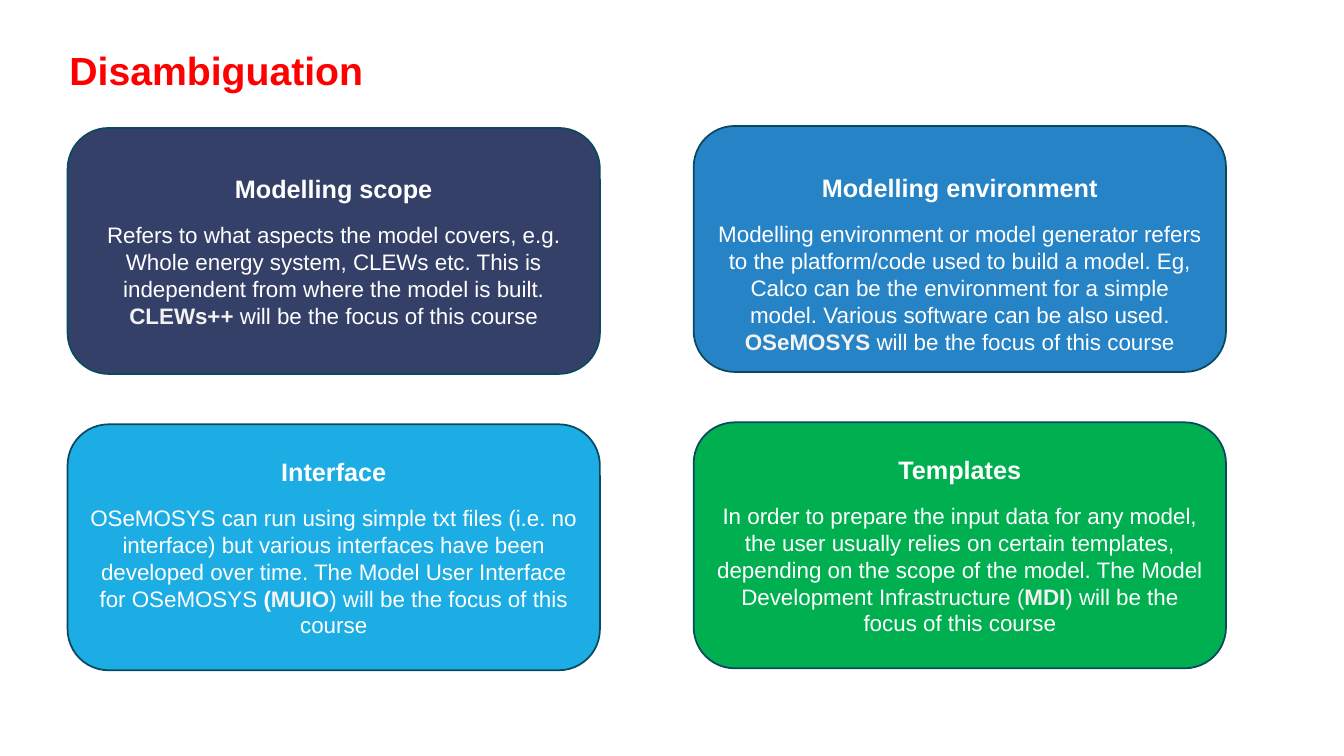
from typing import NamedTuple

from pptx import Presentation
from pptx.dml.color import RGBColor
from pptx.enum.shapes import MSO_SHAPE
from pptx.enum.text import MSO_ANCHOR, PP_ALIGN
from pptx.util import Emu, Pt

ROUNDED = MSO_SHAPE.ROUNDED_RECTANGLE
MIDDLE, BOTTOM = MSO_ANCHOR.MIDDLE, MSO_ANCHOR.BOTTOM
CENTER = PP_ALIGN.CENTER

PX = 9144
FONT = "Arial"
COLORS = {
    "title": "FF0000",
    "text": "FFFFFF",
    "accent": "F2F2F2",
    "outline": "0B4960",
    "navy": "344068",
    "blue": "2683C6",
    "sky": "1CADE4",
    "green": "00B050",
}

CARD_LEFT, CARD_TOP = 67, 127
CARD_W, CARD_H = 528, 244
COL_STEP, ROW_STEP = 621, 294
RIGHT_COL_RISE = 2


class Run(NamedTuple):
    text: str
    bold: bool = False
    color: str = "text"


class Card(NamedTuple):
    heading: str
    fill: str
    body: list[Run]
    top_inset: int = 5


CARDS = [
    Card("Modelling scope", "navy", [
        Run("Refers to what aspects the model covers, e.g. Whole energy system, "
            "CLEWs etc. This is independent from where the model is built. "),
        Run("CLEWs++ ", True, "accent"),
        Run("will be the focus of this course"),
    ]),
    Card("Modelling environment", "blue", [
        Run("Modelling environment or model generator refers to the platform/code "
            "used to build a model. Eg, Calco can be the environment for a simple "
            "model. Various software can be also used"),
        Run(". ", False, "accent"),
        Run("OSeMOSYS ", True, "accent"),
        Run("will be the focus of this course"),
    ], top_inset=34),
    Card("Interface", "sky", [
        Run("OSeMOSYS can run using simple txt files (i.e. no interface) but "
            "various interfaces have been developed over time. The Model User "
            "Interface for OSeMOSYS"),
        Run(" (", True),
        Run("MUIO", True, "accent"),
        Run(") will be the focus of this course"),
    ]),
    Card("Templates", "green", [
        Run("In order to prepare the input data for any model, the user usually "
            "relies on certain templates, depending on the scope of the model. "
            "The Model Development Infrastructure "),
        Run("(", False, "accent"),
        Run("MDI", True, "accent"),
        Run(") ", False, "accent"),
        Run("will be the focus of this course"),
    ]),
]


def px(n: int) -> Emu:
    return Emu(n * PX)


def rgb(name: str) -> RGBColor:
    return RGBColor.from_string(COLORS[name])


def add_runs(p, runs: list[Run], size: int) -> None:
    for run in runs:
        r = p.add_run()
        r.text = run.text
        r.font.name = FONT
        r.font.size = Pt(size)
        r.font.bold = run.bold
        r.font.color.rgb = rgb(run.color)


def set_frame(tf, anchor: MSO_ANCHOR, top_inset: int = 5) -> None:
    tf.word_wrap = True
    tf.vertical_anchor = anchor
    tf.margin_left = tf.margin_right = px(10)
    tf.margin_top, tf.margin_bottom = px(top_inset), px(5)


def add_title(s, text: str) -> None:
    tf = s.shapes.add_textbox(px(59), px(0), px(1150), px(98)).text_frame
    set_frame(tf, BOTTOM)
    p = tf.paragraphs[0]
    p.line_spacing = 0.9
    add_runs(p, [Run(text, True, "title")], 28)


def add_card(s, card: Card, row: int, col: int) -> None:
    left = CARD_LEFT + col * COL_STEP
    top = CARD_TOP + row * ROW_STEP - col * RIGHT_COL_RISE
    sp = s.shapes.add_shape(ROUNDED, px(left), px(top), px(CARD_W), px(CARD_H))
    sp.shadow.inherit = False
    sp.fill.solid()
    sp.fill.fore_color.rgb = rgb(card.fill)
    sp.line.color.rgb = rgb("outline")
    sp.line.width = Pt(1.25)
    tf = sp.text_frame
    set_frame(tf, MIDDLE, card.top_inset)
    heading = tf.paragraphs[0]
    heading.alignment = CENTER
    heading.space_after = Pt(12.6)
    add_runs(heading, [Run(card.heading, True)], 18)
    body = tf.add_paragraph()
    body.alignment = CENTER
    add_runs(body, card.body, 16)


def main() -> None:
    prs = Presentation()
    prs.slide_width, prs.slide_height = px(1333), px(750)
    s = prs.slides.add_slide(prs.slide_layouts[6])
    add_title(s, "Disambiguation")
    for i, card in enumerate(CARDS):
        add_card(s, card, *divmod(i, 2))
    prs.save("out.pptx")


if __name__ == "__main__":
    main()
